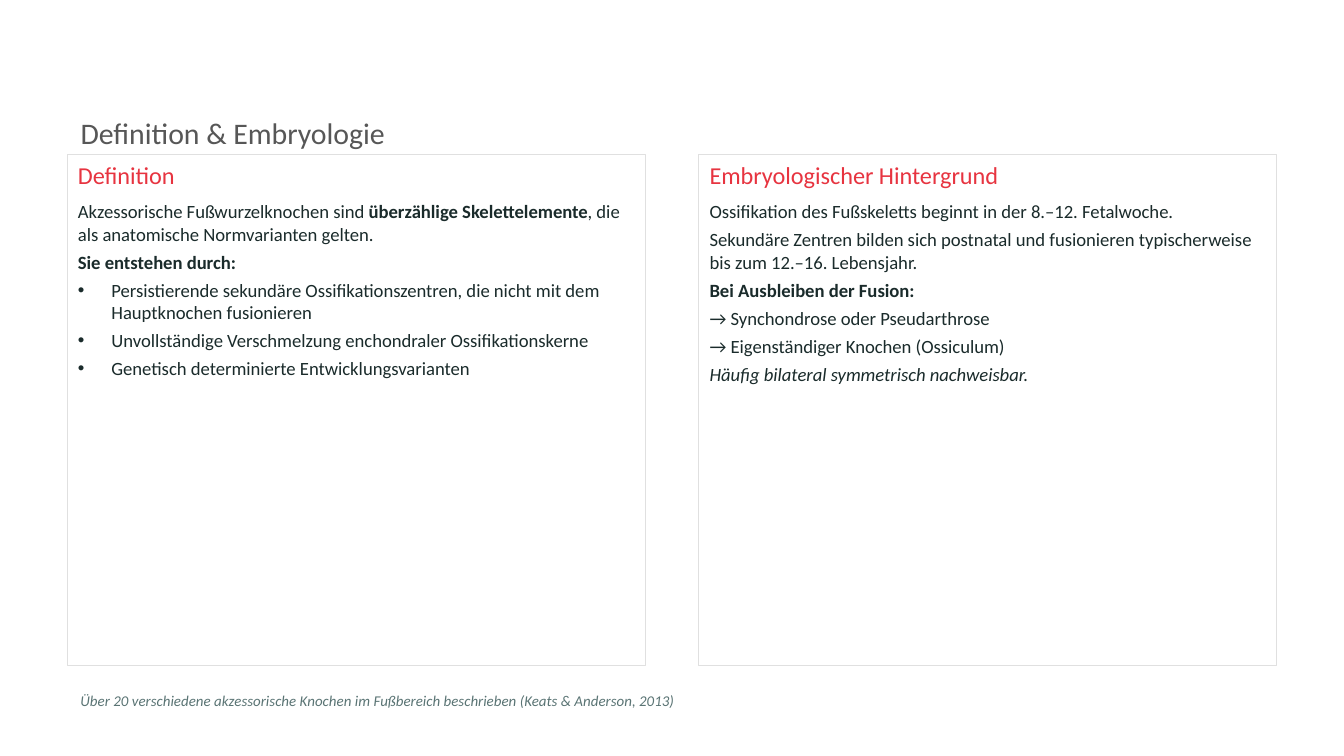
"""Build the slide on definition and embryology of accessory foot bones."""
from dataclasses import dataclass

import pptx
import pptx.dml.color
import pptx.enum.shapes
import pptx.enum.text
import pptx.oxml.ns
import pptx.util
from lxml import etree


@dataclass(frozen=True)
class Theme:
    font: str = "Calibri"
    bullet_font: str = "Arial"
    title_color: str = "575757"
    heading_color: str = "E73440"
    body_color: str = "1A2B2B"
    source_color: str = "5A7474"
    panel_color: str = "FFFFFF"
    border_color: str = "E0E0E0"
    title_size: float = 16
    heading_size: float = 13
    body_size: float = 10
    source_size: float = 8
    border_width: float = 0.5


@dataclass(frozen=True)
class Area:
    column: int
    row: int
    columns: int
    rows: int


@dataclass(frozen=True)
class Run:
    text: str
    bold: bool = False
    italic: bool = False


@dataclass(frozen=True)
class Line:
    runs: tuple[Run, ...]
    bullet: bool = False


@dataclass(frozen=True)
class Panel:
    heading: str
    lines: tuple[Line, ...]


THEME = Theme()
SLIDE_WIDTH = pptx.util.Inches(10)
SLIDE_HEIGHT = SLIDE_WIDTH * 9 // 16
COLUMN = pptx.util.Inches(0.1)
ROW = pptx.util.Inches(0.05)
MARGIN, PANEL_COLUMNS, GUTTER = 5, 43, 4
TITLE_AREA = Area(MARGIN, 16, 90, 10)
SOURCE_AREA = Area(MARGIN, 102, 90, 7)
TITLE = "Definition & Embryologie"
SOURCE = "Über 20 verschiedene akzessorische Knochen im Fußbereich beschrieben (Keats & Anderson, 2013)"

PANELS = (
    Panel("Definition", (
        Line((
            Run("Akzessorische Fußwurzelknochen sind "),
            Run("überzählige Skelettelemente", bold=True),
            Run(", die als anatomische Normvarianten gelten."),
        )),
        Line((Run("Sie entstehen durch:", bold=True),)),
        Line((Run("Persistierende sekundäre Ossifikationszentren, die nicht mit dem "
                  "Hauptknochen fusionieren"),), bullet=True),
        Line((Run("Unvollständige Verschmelzung enchondraler Ossifikationskerne"),), bullet=True),
        Line((Run("Genetisch determinierte Entwicklungsvarianten"),), bullet=True),
    )),
    Panel("Embryologischer Hintergrund", (
        Line((Run("Ossifikation des Fußskeletts beginnt in der 8.–12. Fetalwoche."),)),
        Line((Run("Sekundäre Zentren bilden sich postnatal und fusionieren typischerweise "
                  "bis zum 12.–16. Lebensjahr."),)),
        Line((Run("Bei Ausbleiben der Fusion:", bold=True),)),
        Line((Run("→ Synchondrose oder Pseudarthrose"),)),
        Line((Run("→ Eigenständiger Knochen (Ossiculum)"),)),
        Line((Run("Häufig bilateral symmetrisch nachweisbar.", italic=True),)),
    )),
)


def bounds(area: Area) -> tuple[int, int, int, int]:
    """Return left, top, width and height of a grid area."""
    return area.column * COLUMN, area.row * ROW, area.columns * COLUMN, area.rows * ROW


def rgb(color: str) -> pptx.dml.color.RGBColor:
    """Return a hex colour as an RGBColor."""
    return pptx.dml.color.RGBColor.from_string(color)


def prepare_frame(frame) -> None:
    """Wrap text and anchor it at the top at a fixed size."""
    frame.word_wrap = True
    frame.auto_size = pptx.enum.text.MSO_AUTO_SIZE.NONE
    frame.vertical_anchor = pptx.enum.text.MSO_ANCHOR.TOP


def write(paragraph, runs: tuple[Run, ...], size: float, color: str, after: float = 0) -> None:
    """Fill a left-aligned paragraph run by run."""
    paragraph.alignment = pptx.enum.text.PP_ALIGN.LEFT
    paragraph.space_before = pptx.util.Pt(0)
    paragraph.space_after = pptx.util.Pt(after)
    for part in runs:
        run = paragraph.add_run()
        run.text = part.text
        run.font.name = THEME.font
        run.font.size = pptx.util.Pt(size)
        run.font.bold = part.bold
        run.font.italic = part.italic
        run.font.color.rgb = rgb(color)


def add_bullet(paragraph) -> None:
    """Give a paragraph a hanging bullet."""
    properties = paragraph._p.get_or_add_pPr()
    indent = pptx.util.Inches(0.25)
    properties.set("marL", str(indent))
    properties.set("indent", str(-indent))
    etree.SubElement(properties, pptx.oxml.ns.qn("a:buFont")).set("typeface", THEME.bullet_font)
    etree.SubElement(properties, pptx.oxml.ns.qn("a:buChar")).set("char", "•")


def draw_title(slide) -> None:
    """Place and format the slide title."""
    title = slide.shapes.title
    title.left, title.top, title.width, title.height = bounds(TITLE_AREA)
    prepare_frame(title.text_frame)
    write(title.text_frame.paragraphs[0], (Run(TITLE),), THEME.title_size, THEME.title_color)


def draw_panel(slide, panel: Panel, area: Area) -> None:
    """Draw a bordered panel with its heading and lines."""
    card = slide.shapes.add_shape(pptx.enum.shapes.MSO_SHAPE.RECTANGLE, *bounds(area))
    card.shadow.inherit = False
    card.fill.solid()
    card.fill.fore_color.rgb = rgb(THEME.panel_color)
    card.line.color.rgb = rgb(THEME.border_color)
    card.line.width = pptx.util.Pt(THEME.border_width)
    frame = card.text_frame
    prepare_frame(frame)
    frame.margin_left = frame.margin_right = pptx.util.Inches(0.08)
    frame.margin_top = frame.margin_bottom = pptx.util.Inches(0.04)
    write(frame.paragraphs[0], (Run(panel.heading),), THEME.heading_size, THEME.heading_color, 6)
    for line in panel.lines:
        paragraph = frame.add_paragraph()
        if line.bullet:
            add_bullet(paragraph)
        write(paragraph, line.runs, THEME.body_size, THEME.body_color, 3)


def draw_source(slide) -> None:
    """Write the source note below the panels."""
    frame = slide.shapes.add_textbox(*bounds(SOURCE_AREA)).text_frame
    prepare_frame(frame)
    write(frame.paragraphs[0], (Run(SOURCE, italic=True),), THEME.source_size, THEME.source_color)


def main() -> None:
    """Build and save the presentation."""
    deck = pptx.Presentation()
    deck.slide_width = SLIDE_WIDTH
    deck.slide_height = SLIDE_HEIGHT
    slide = deck.slides.add_slide(deck.slide_layouts.get_by_name("Title Only"))
    draw_title(slide)
    for index, panel in enumerate(PANELS):
        column = MARGIN + index * (PANEL_COLUMNS + GUTTER)
        draw_panel(slide, panel, Area(column, 23, PANEL_COLUMNS, 76))
    draw_source(slide)
    deck.save("out.pptx")


if __name__ == "__main__":
    main()
